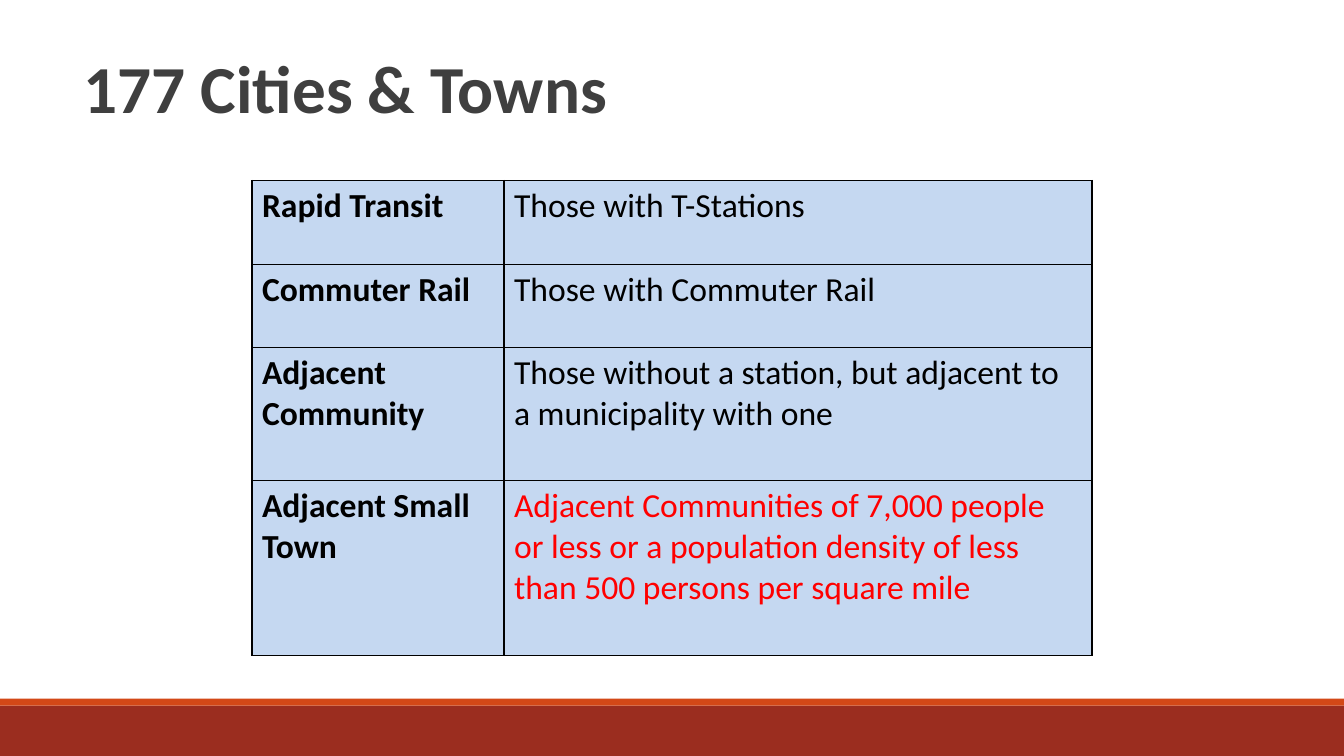
from lxml import etree
from pptx import Presentation
from pptx import util as u
from pptx.dml.color import RGBColor
from pptx.enum import shapes, text
from pptx.oxml.ns import qn

WIDTH, HEIGHT = 13.33, 7.5
FONT = "Calibri"
COLORS = {
    "band": "9B2D1F",
    "stripe": "D34817",
    "title": "3F3F3F",
    "cell": "C5D8F1",
    "text": "000000",
    "highlight": "FF0000",
}
COLUMN_SHARES = (0.3, 0.7)
# Each row: category, definition, definition color, height in inches
CATEGORIES = [
    ("Rapid Transit", "Those with T-Stations", "text", 0.83),
    ("Commuter Rail", "Those with Commuter Rail", "text", 0.83),
    ("Adjacent Community",
     "Those without a station, but adjacent to a municipality with one",
     "text", 1.32),
    ("Adjacent Small Town",
     "Adjacent Communities of 7,000 people or less or a population density "
     "of less than 500 persons per square mile",
     "highlight", 1.73),
]


def color(name):
    return RGBColor.from_string(COLORS[name])


def style_paragraph(paragraph, size, color_name, bold):
    paragraph.alignment = text.PP_ALIGN.LEFT
    font = paragraph.font
    font.name, font.size, font.bold = FONT, u.Pt(size), bold
    font.color.rgb = color(color_name)


def add_bar(slide, left, top, width, height, color_name):
    bar = slide.shapes.add_shape(
        shapes.MSO_SHAPE.RECTANGLE,
        u.Inches(left), u.Inches(top), u.Inches(width), u.Inches(height))
    bar.shadow.inherit = False
    bar.fill.solid()
    bar.fill.fore_color.rgb = color(color_name)
    bar.line.fill.background()


def add_footer(slide, left, top, width, height):
    stripe = height / 8
    add_bar(slide, left, top + stripe, width, height - stripe, "band")
    add_bar(slide, left, top, width, stripe, "stripe")


def add_title(slide, left, top, width, height):
    title = slide.shapes.title
    title.left, title.top = u.Inches(left), u.Inches(top)
    title.width, title.height = u.Inches(width), u.Inches(height)
    frame = title.text_frame
    frame.text = "177 Cities & Towns"
    frame.vertical_anchor = text.MSO_ANCHOR.MIDDLE
    frame.auto_size = text.MSO_AUTO_SIZE.NONE
    frame.paragraphs[0].line_spacing = 0.85
    style_paragraph(frame.paragraphs[0], 48, "title", True)


def add_borders(cell):
    # Borders must come before the fill in the cell properties
    properties = cell._tc.get_or_add_tcPr()
    for index, side in enumerate(("lnL", "lnR", "lnT", "lnB")):
        line = etree.Element(qn(f"a:{side}"), w=str(u.Pt(1)))
        fill = etree.SubElement(line, qn("a:solidFill"))
        etree.SubElement(fill, qn("a:srgbClr"), val=COLORS["text"])
        properties.insert(index, line)


def fill_cell(cell, words, color_name, bold):
    cell.text = words
    cell.margin_left = cell.margin_right = u.Inches(0.1)
    cell.margin_top = cell.margin_bottom = u.Inches(0.05)
    cell.fill.solid()
    cell.fill.fore_color.rgb = color("cell")
    style_paragraph(cell.text_frame.paragraphs[0], 24, color_name, bold)
    add_borders(cell)


def add_category_table(slide, left, top, width):
    height = sum(row[-1] for row in CATEGORIES)
    table = slide.shapes.add_table(
        len(CATEGORIES), len(COLUMN_SHARES),
        u.Inches(left), u.Inches(top), u.Inches(width), u.Inches(height)).table
    table.first_row = table.horz_banding = False
    for column, share in zip(table.columns, COLUMN_SHARES):
        column.width = u.Inches(width * share)
    for row, (category, definition, color_name, row_height) in zip(table.rows, CATEGORIES):
        row.height = u.Inches(row_height)
        fill_cell(row.cells[0], category, "text", True)
        fill_cell(row.cells[1], definition, color_name, False)


def main():
    presentation = Presentation()
    presentation.slide_width = u.Inches(WIDTH)
    presentation.slide_height = u.Inches(HEIGHT)
    title_only = presentation.slide_layouts[5]
    slide = presentation.slides.add_slide(title_only)

    # Footer bands, title and table
    add_footer(slide, 0, 6.93, WIDTH, HEIGHT - 6.93)
    add_title(slide, 0.73, 0.36, 9, 1.12)
    table_width = WIDTH * 0.625
    add_category_table(slide, (WIDTH - table_width) / 2, 1.79, table_width)

    presentation.save("out.pptx")


if __name__ == "__main__":
    main()
